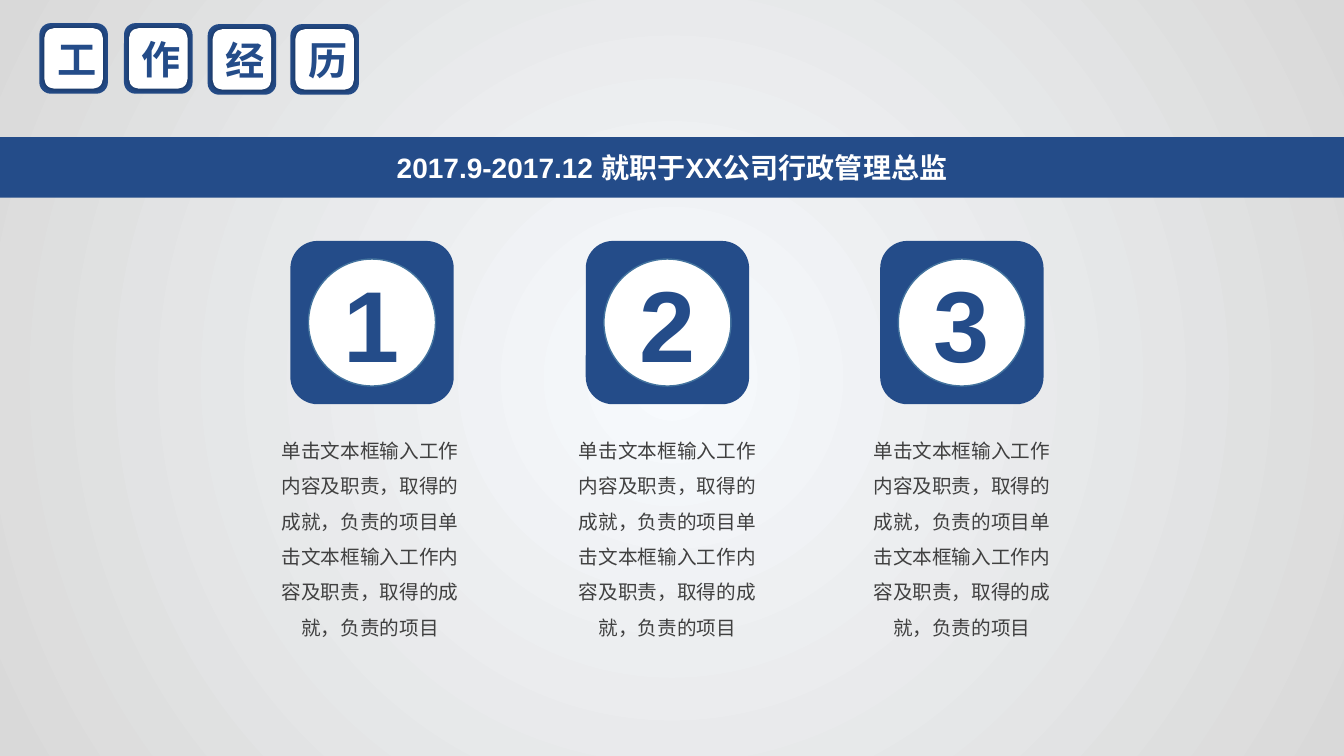
import pptx
import pptx.dml.color
import pptx.enum.dml
import pptx.enum.shapes
import pptx.enum.text
import pptx.oxml
import pptx.oxml.ns
import pptx.util
from lxml import etree

Inches = pptx.util.Inches
Pt = pptx.util.Pt
Kind = pptx.enum.shapes.MSO_SHAPE
Fit = pptx.enum.text.MSO_AUTO_SIZE
qn = pptx.oxml.ns.qn

BLUE = "244C89"
WHITE = "FFFFFF"
GRAY = "404040"
DUTY = "单击文本框输入工作内容及职责，取得的成就，负责的项目" * 2


def paint(target, code):
    if hasattr(target, "solid"):
        target.solid()
        target = target.fore_color
    target.rgb = pptx.dml.color.RGBColor.from_string(code)


def place(shape, box):
    shape.left, shape.top, shape.width, shape.height = map(Inches, box)


def write(shape, text, size, code, bold=True, gap=1.0, fit=Fit.NONE):
    frame = shape.text_frame
    frame.text = text
    frame.word_wrap = True
    frame.auto_size = fit
    para = frame.paragraphs[0]
    para.alignment = pptx.enum.text.PP_ALIGN.CENTER
    para.line_spacing = gap
    font = para.runs[0].font
    font.name = "Arial"
    font.size = Pt(size)
    font.bold = bold
    paint(font.color, code)


def center(shape):
    shape.text_frame.vertical_anchor = pptx.enum.text.MSO_ANCHOR.MIDDLE


def draw(shapes, kind, box, fill, line=None):
    shape = shapes.add_shape(kind, *map(Inches, box))
    shape.shadow.inherit = False
    paint(shape.fill, fill)
    if line:
        paint(shape.line.fill, line)
        shape.line.width = Pt(1)
    else:
        shape.line.fill.background()
    center(shape)
    return shape


def glow(shape):
    effects = shape.element.spPr.find(qn("a:effectLst"))
    blur = etree.SubElement(effects, qn("a:outerShdw"), blurRad=str(Pt(5)), dist="0", dir="0")
    color = etree.SubElement(blur, qn("a:srgbClr"), val="000000")
    etree.SubElement(color, qn("a:alpha"), val="40000")


def backdrop(slide):
    fill = slide.background.fill
    fill.gradient()
    for stop, code in zip(fill.gradient_stops, ("F7FAFD", "D9D9D9")):
        paint(stop.color, code)
    grad = slide.element.find(".//" + qn("a:gradFill"))
    grad.remove(grad.find(qn("a:lin")))
    way = etree.SubElement(grad, qn("a:path"), path="circle")
    etree.SubElement(way, qn("a:fillToRect"), l="50000", t="50000", r="50000", b="50000")


def banner(slide, box):
    title = slide.shapes.title
    place(title, box)
    paint(title.fill, BLUE)
    write(title, "2017.9-2017.12 就职于XX公司行政管理总监", 20, WHITE)
    center(title)


def tile(slide, box, word):
    left, top, width, height = box
    shapes = slide.shapes.add_group_shape().shapes
    draw(shapes, Kind.ROUNDED_RECTANGLE, box, BLUE)
    inner = (left + 0.05, top + 0.05, width - 0.1, height - 0.1)
    face = draw(shapes, Kind.ROUNDED_RECTANGLE, inner, WHITE)
    glow(face)
    write(face, word, 28, BLUE)


def badge(slide, box, number):
    left, top, width, height = box
    shapes = slide.shapes.add_group_shape().shapes
    draw(shapes, Kind.ROUNDED_RECTANGLE, box, BLUE)
    inner = (left + 0.18, top + 0.18, width - 0.36, height - 0.36)
    disc = draw(shapes, Kind.OVAL, inner, WHITE, "43739E")
    write(disc, str(number), 72, BLUE)


def duty(slide, box):
    note = slide.shapes.add_textbox(*map(Inches, box))
    write(note, DUTY, 14, GRAY, False, 1.5, Fit.SHAPE_TO_FIT_TEXT)


def main():
    deck = pptx.Presentation()
    deck.slide_width = Inches(13.33)
    deck.slide_height = Inches(7.5)
    slide = deck.slides.add_slide(deck.slide_layouts[5])
    backdrop(slide)
    banner(slide, (0, 1.36, 13.33, 0.6))
    tiles = ((0.39, 0.23), (1.23, 0.23), (2.06, 0.24), (2.88, 0.24))
    for word, (left, top) in zip("工作经历", tiles):
        tile(slide, (left, top, 0.68, 0.7), word)
    columns = ((2.88, 2.69), (5.81, 5.64), (8.73, 8.56))
    for number, (left, edge) in enumerate(columns, 1):
        badge(slide, (left, 2.39, 1.62, 1.62), number)
        duty(slide, (edge, 4.19, 1.96, 2.18))
    deck.save("out.pptx")


if __name__ == "__main__":
    main()
